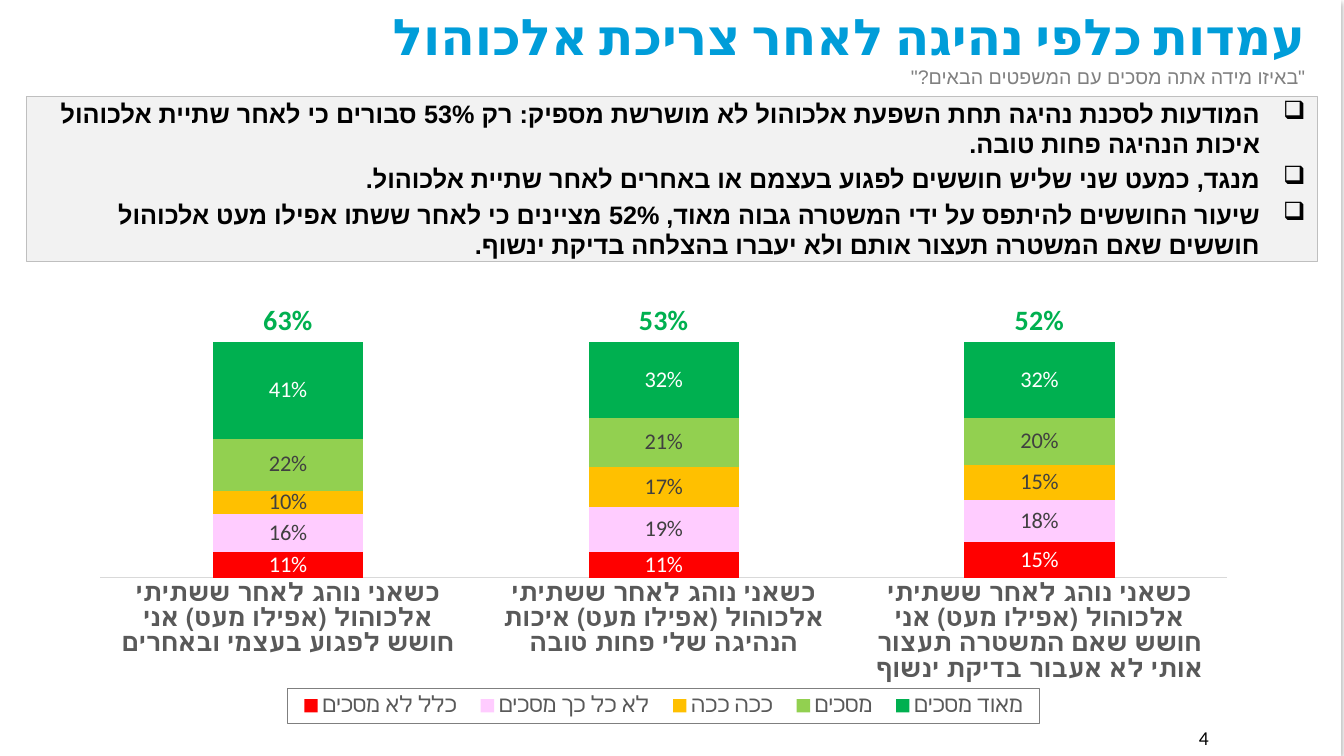
import dataclasses

import pptx
import pptx.chart.data
import pptx.dml.color
import pptx.enum.chart
import pptx.enum.lang
import pptx.enum.shapes
import pptx.enum.text
import pptx.oxml
import pptx.oxml.ns
import pptx.util

Pt = pptx.util.Pt
Align = pptx.enum.text.PP_ALIGN
Anchor = pptx.enum.text.MSO_ANCHOR
LabelPosition = pptx.enum.chart.XL_LABEL_POSITION


@dataclasses.dataclass(frozen=True)
class Theme:
    latin: str = "Calibri"
    hebrew: str = "Arial"
    title_size: int = 36
    total_size: int = 20
    body_size: int = 18
    chart_size: int = 16
    small_size: int = 14
    white: str = "FFFFFF"
    black: str = "000000"
    title: str = "009DD9"
    subtitle: str = "808080"
    panel: str = "F2F2F2"
    panel_line: str = "BFBFBF"
    axis_line: str = "D9D9D9"
    legend_line: str = "7F7F7F"
    axis_text: str = "595959"
    label_text: str = "404040"
    strong: str = "00B050"


THEME = Theme()

FINDINGS = [
    "המודעות לסכנת נהיגה תחת השפעת אלכוהול לא מושרשת מספיק: רק 53% סבורים כי לאחר שתיית אלכוהול איכות הנהיגה פחות טובה.",
    "מנגד, כמעט שני שליש חוששים לפגוע בעצמם או באחרים לאחר שתיית אלכוהול.",
    "שיעור החוששים להיתפס על ידי המשטרה גבוה מאוד, 52% מציינים כי לאחר ששתו אפילו מעט אלכוהול חוששים שאם המשטרה תעצור אותם ולא יעברו בהצלחה בדיקת ינשוף.",
]
STATEMENTS = [
    "כשאני נוהג לאחר ששתיתי אלכוהול (אפילו מעט) אני חושש לפגוע בעצמי ובאחרים",
    "כשאני נוהג לאחר ששתיתי אלכוהול (אפילו מעט) איכות הנהיגה שלי פחות טובה",
    "כשאני נוהג לאחר ששתיתי אלכוהול (אפילו מעט) אני חושש שאם המשטרה תעצור אותי לא אעבור בדיקת ינשוף",
]
ANSWERS = [
    ("כלל לא מסכים", (0.11, 0.11, 0.15), "FF0000", THEME.white),
    ("לא כל כך מסכים", (0.16, 0.19, 0.18), "FFCCFF", THEME.label_text),
    ("ככה ככה", (0.10, 0.17, 0.15), "FFC000", THEME.label_text),
    ("מסכים", (0.22, 0.21, 0.20), "92D050", THEME.label_text),
    ("מאוד מסכים", (0.41, 0.32, 0.32), THEME.strong, THEME.white),
]
TOTALS = ("Series 6", (0.63, 0.53, 0.52))


def rgb(value):
    return pptx.dml.color.RGBColor.from_string(value)


def fragment(prefix, tag, inside=""):
    names = pptx.oxml.ns.nsdecls(prefix)
    return pptx.oxml.parse_xml(f"<{prefix}:{tag} {names}>{inside}</{prefix}:{tag}>")


def style_font(font, size, color, bold=False, name=THEME.latin):
    font.size = Pt(size)
    font.bold = bold
    font.name = name
    font.color.rgb = rgb(color)


def add_span(para, text, size, color, bold=False, name=THEME.latin, hebrew=True):
    span = para.add_run()
    span.text = text
    style_font(span.font, size, color, bold, name)
    if hebrew:
        span.font.language_id = pptx.enum.lang.MSO_LANGUAGE_ID.HEBREW
        complex_font = fragment("a", "cs")
        complex_font.set("typeface", name)
        span.font._element.append(complex_font)


def set_right_to_left(para):
    para.alignment = Align.RIGHT
    para._p.get_or_add_pPr().set("rtl", "1")


def prepare_frame(shape, anchor):
    frame = shape.text_frame
    frame.word_wrap = True
    frame.vertical_anchor = anchor
    frame.margin_left = frame.margin_right = Pt(8.4)
    frame.margin_top = frame.margin_bottom = Pt(4.2)
    return frame


def add_rectangle(page, box, fill):
    shape = page.shapes.add_shape(pptx.enum.shapes.MSO_SHAPE.RECTANGLE, *map(Pt, box))
    shape.shadow.inherit = False
    shape.fill.solid()
    shape.fill.fore_color.rgb = rgb(fill)
    return shape


def add_backdrop(page, box):
    shape = add_rectangle(page, box, THEME.white)
    shape.line.fill.background()
    effects = shape._element.spPr.find(pptx.oxml.ns.qn("a:effectLst"))
    shadow = fragment(
        "a", "outerShdw",
        f'<a:srgbClr val="{THEME.black}"><a:alpha val="32000"/></a:srgbClr>')
    for key, value in (("blurRad", Pt(3.5)), ("dist", Pt(2.2)),
                       ("dir", 5400000), ("rotWithShape", 0)):
        shadow.set(key, str(int(value)))
    effects.append(shadow)


def add_heading(page, box, text, size, color, bold, name):
    shape = page.shapes.add_textbox(*map(Pt, box))
    para = prepare_frame(shape, Anchor.MIDDLE).paragraphs[0]
    set_right_to_left(para)
    add_span(para, text, size, color, bold, name)


def add_findings(page, box):
    shape = add_rectangle(page, box, THEME.panel)
    shape.line.color.rgb = rgb(THEME.panel_line)
    shape.line.width = Pt(0.75)
    frame = prepare_frame(shape, Anchor.MIDDLE)
    for index, text in enumerate(FINDINGS):
        para = frame.add_paragraph() if index else frame.paragraphs[0]
        set_right_to_left(para)
        para.space_before = Pt(3.6 if index else 0)
        properties = para._p.get_or_add_pPr()
        properties.set("marL", str(int(Pt(32.4))))
        properties.set("indent", str(-int(Pt(32.4))))
        bullet = fragment("a", "buChar")
        bullet.set("char", "❑")
        properties.append(bullet)
        add_span(para, text, THEME.body_size, THEME.black, True, THEME.hebrew)


def add_page_number(page, box, number):
    shape = page.shapes.add_textbox(*map(Pt, box))
    para = prepare_frame(shape, Anchor.TOP).paragraphs[0]
    para.alignment = Align.CENTER
    add_span(para, number, THEME.small_size, THEME.black, hebrew=False)


def manual_layout(left, top, width, height, inner=False):
    target = '<c:layoutTarget val="inner"/>' if inner else ""
    modes = '<c:xMode val="edge"/><c:yMode val="edge"/>'
    sizes = "".join(f'<c:{key} val="{value}"/>' for key, value in
                    zip("xywh", (left, top, width, height)))
    return fragment("c", "layout", f"<c:manualLayout>{target}{modes}{sizes}</c:manualLayout>")


def style_legend(chart):
    chart.has_legend = True
    legend = chart.legend
    legend.position = pptx.enum.chart.XL_LEGEND_POSITION.BOTTOM
    legend.include_in_layout = False
    style_font(legend.font, THEME.chart_size, THEME.axis_text)
    element = legend._element
    for layout in element.findall(pptx.oxml.ns.qn("c:layout")):
        element.remove(layout)
    hidden = fragment("c", "legendEntry", f'<c:idx val="{len(ANSWERS)}"/><c:delete val="1"/>')
    element.insert(1, hidden)
    element.insert(2, manual_layout(0.18, 0.91, 0.64, 0.08))
    outline = fragment(
        "a", "ln", f'<a:solidFill><a:srgbClr val="{THEME.legend_line}"/></a:solidFill>')
    outline.set("w", str(int(Pt(0.75))))
    frame = fragment("c", "spPr")
    frame.append(outline)
    element.find(pptx.oxml.ns.qn("c:overlay")).addnext(frame)


def add_answers_chart(page, box):
    data = pptx.chart.data.CategoryChartData(number_format="0%")
    data.categories = STATEMENTS
    for name, values, *_ in ANSWERS + [TOTALS]:
        data.add_series(name, values)
    kind = pptx.enum.chart.XL_CHART_TYPE.COLUMN_STACKED
    chart = page.shapes.add_chart(kind, *map(Pt, box), data).chart
    chart.has_title = False
    style_font(chart.font, THEME.chart_size, THEME.black)
    plot = chart.plots[0]
    plot.gap_width, plot.overlap, plot.vary_by_categories = 150, 100, False
    *answers, totals = plot.series
    for series, (_, _, fill, text_color) in zip(answers, ANSWERS):
        series.format.fill.solid()
        series.format.fill.fore_color.rgb = rgb(fill)
        style_labels(series, LabelPosition.CENTER, THEME.chart_size, text_color)
    totals.format.fill.background()
    style_labels(totals, LabelPosition.INSIDE_BASE, THEME.total_size, THEME.strong, True)
    scale = chart.value_axis
    scale.minimum_scale, scale.maximum_scale = 0, 1.2
    scale.has_major_gridlines = False
    scale.visible = False
    style_statements(chart.category_axis)
    area = chart._chartSpace.chart.plotArea
    for layout in area.findall(pptx.oxml.ns.qn("c:layout")):
        area.remove(layout)
    area.insert(0, manual_layout(0.02, 0.02, 0.96, 0.64, inner=True))
    style_legend(chart)


def style_labels(series, position, size, color, bold=False):
    labels = series.data_labels
    labels.show_value = True
    labels.number_format = "0%"
    labels.number_format_is_linked = False
    labels.position = position
    style_font(labels.font, size, color, bold)


def style_statements(axis):
    axis.major_tick_mark = pptx.enum.chart.XL_TICK_MARK.NONE
    axis.format.line.color.rgb = rgb(THEME.axis_line)
    axis.format.line.width = Pt(0.75)
    style_font(axis.tick_labels.font, THEME.body_size, THEME.axis_text, True)


def build_attitudes_page(page, width, height):
    add_backdrop(page, (-2, 0, width, height))
    add_heading(page, (18.7, 0, 922.3, 51), "עמדות כלפי נהיגה לאחר צריכת אלכוהול",
                THEME.title_size, THEME.title, True, THEME.latin)
    add_findings(page, (18.7, 69, 922.3, 117.5))
    add_page_number(page, (748, 514, 224, 29), "4")
    add_heading(page, (90.7, 41, 850.3, 28), '"באיזו מידה אתה מסכים עם המשפטים הבאים?"',
                THEME.small_size, THEME.subtitle, False, THEME.hebrew)
    add_answers_chart(page, (54.7, 204.5, 838.8, 315.4))


deck = pptx.Presentation()
deck.slide_width, deck.slide_height = Pt(960), Pt(540)
build_attitudes_page(deck.slides.add_slide(deck.slide_layouts[6]), 960, 540)
deck.save("out.pptx")
